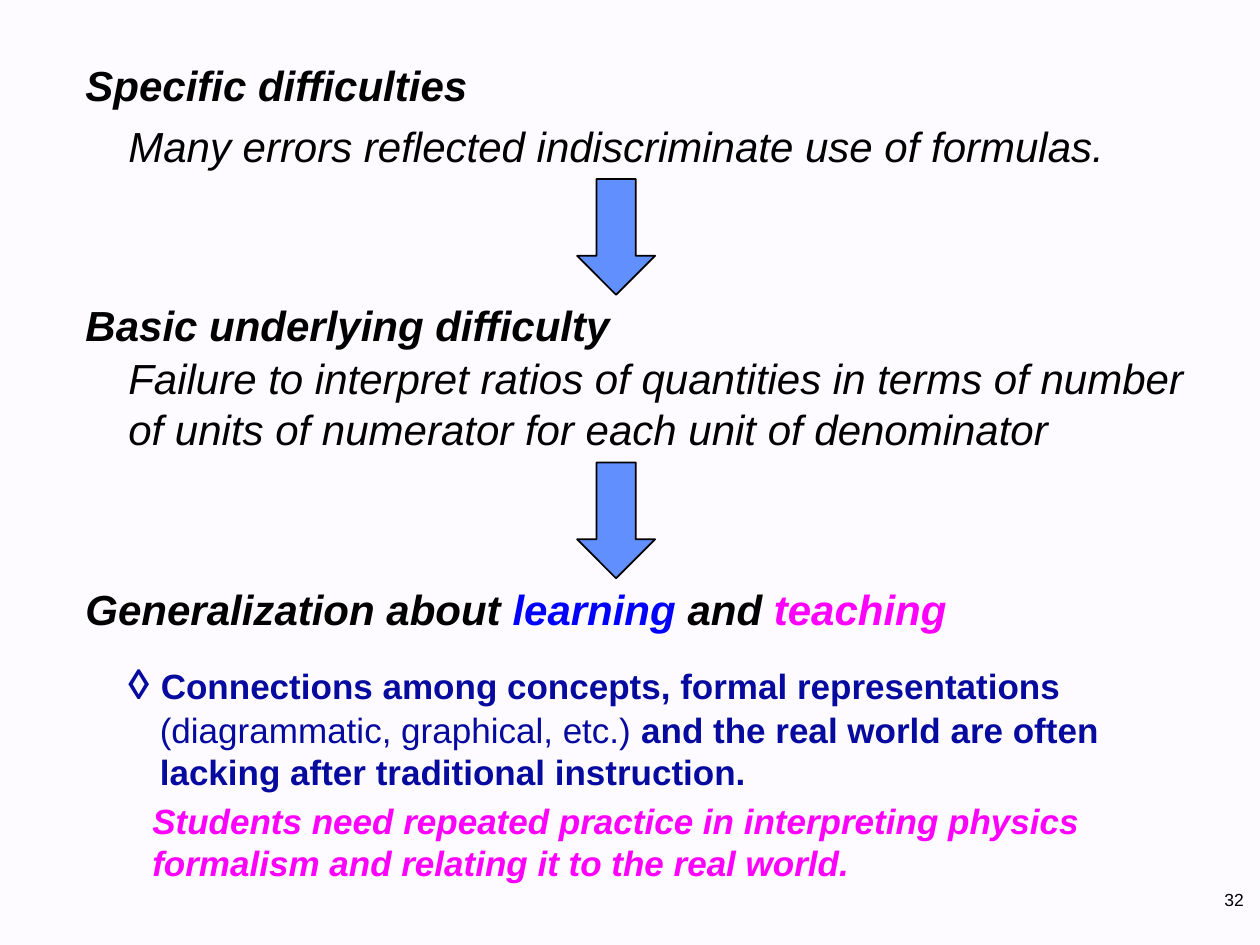
from pptx import Presentation
from pptx.dml.color import RGBColor
from pptx.enum.shapes import MSO_SHAPE
from pptx.enum.text import MSO_ANCHOR, MSO_AUTO_SIZE, PP_ALIGN
from pptx.util import Inches, Pt

BACKGROUND = RGBColor(0xFD, 0xFB, 0xFF)
BLACK = RGBColor(0, 0, 0)
BLUE = RGBColor(0, 0, 0xFF)
NAVY = RGBColor(0x06, 0x0A, 0x9E)
MAGENTA = RGBColor(0xFF, 0, 0xFF)
ARROW_BLUE = RGBColor(0x61, 0x8F, 0xFD)

# Runs: (text, size, colour, style), where style holds "b" and/or "i"
# Headings: (left, top, width, height), runs
HEADINGS = [
    ((0.58, 0.42, 9.08, 0.5), [("Specific difficulties", 24, BLACK, "bi")]),
    ((0.58, 2.33, 7.89, 0.5), [("Basic underlying difficulty", 24, BLACK, "bi")]),
    ((0.58, 4.58, 7.89, 0.5), [
        ("Generalization about ", 24, BLACK, "bi"),
        ("learning ", 24, BLUE, "bi"),
        ("and ", 24, BLACK, "bi"),
        ("teaching", 24, MAGENTA, "bi"),
    ]),
]
STATEMENTS = [
    ((0.92, 0.91, 8.83, 0.5), [
        ("Many errors reflected indiscriminate use of formulas.", 24, BLACK, "i"),
    ]),
    ((0.92, 2.75, 8.75, 0.91), [
        ("Failure to interpret ratios of quantities in terms of number of units "
         "of numerator for each unit of denominator", 24, BLACK, "i"),
    ]),
]
CONCLUSION_AREA = (0.92, 5.17, 8.58, 1.92)
# Paragraphs: (left margin, first-line indent), runs
CONCLUSIONS = [
    ((0.25, -0.25), [
        ("◊ ", 24, NAVY, "b"),
        ("Connections among concepts, formal representations ", 20, NAVY, "b"),
        ("(diagrammatic, graphical, etc.)", 20, NAVY, ""),
        (" and the real world are often lacking after traditional instruction.",
         20, NAVY, "b"),
    ]),
    ((0.19, 0), [
        ("Students need repeated practice in interpreting physics formalism "
         "and relating it to the real world.", 20, MAGENTA, "bi"),
    ]),
]
ARROW_TOPS = [1.42, 3.67]
PAGE_NUMBER = ((9.6, 7, 0.37, 0.27), [("32", 10, BLACK, "")])


def add_text(page, area, paragraphs, space_before=0, wrap=True):
    box = page.shapes.add_textbox(*map(Inches, area))
    frame = box.text_frame
    frame.word_wrap = wrap
    frame.auto_size = MSO_AUTO_SIZE.SHAPE_TO_FIT_TEXT
    for index, ((margin, indent), runs) in enumerate(paragraphs):
        para = frame.add_paragraph() if index else frame.paragraphs[0]
        para.space_before = Pt(space_before)
        properties = para._p.get_or_add_pPr()
        properties.set("marL", str(Inches(margin)))
        properties.set("indent", str(Inches(indent)))
        for text, size, colour, style in runs:
            span = para.add_run()
            span.text = text
            span.font.name = "Arial"
            span.font.size = Pt(size)
            span.font.color.rgb = colour
            span.font.bold = "b" in style
            span.font.italic = "i" in style
    return frame


def add_down_arrow(page, top):
    arrow = page.shapes.add_shape(
        MSO_SHAPE.DOWN_ARROW, Inches(4.58), Inches(top), Inches(0.62), Inches(0.92))
    arrow.adjustments[0] = 0.5
    arrow.adjustments[1] = 0.5
    arrow.shadow.inherit = False
    arrow.fill.solid()
    arrow.fill.fore_color.rgb = ARROW_BLUE
    arrow.line.color.rgb = BLACK
    arrow.line.width = Pt(1)


def main():
    deck = Presentation()
    deck.slide_width, deck.slide_height = Inches(10), Inches(7.5)
    page = deck.slides.add_slide(deck.slide_layouts[6])
    page.background.fill.solid()
    page.background.fill.fore_color.rgb = BACKGROUND

    # Page number
    area, runs = PAGE_NUMBER
    frame = add_text(page, area, [((0, 0), runs)], wrap=False)
    frame.vertical_anchor = MSO_ANCHOR.BOTTOM
    frame.paragraphs[0].alignment = PP_ALIGN.RIGHT

    # Conclusions, then the arrows between the three stages
    add_text(page, CONCLUSION_AREA, CONCLUSIONS, space_before=4)
    for top in ARROW_TOPS:
        add_down_arrow(page, top)

    # Stage headings and their statements
    for entries, gap in ((HEADINGS, 12), (STATEMENTS, 5)):
        for area, runs in entries:
            add_text(page, area, [((0, 0), runs)], space_before=gap)

    deck.save("out.pptx")


if __name__ == "__main__":
    main()
